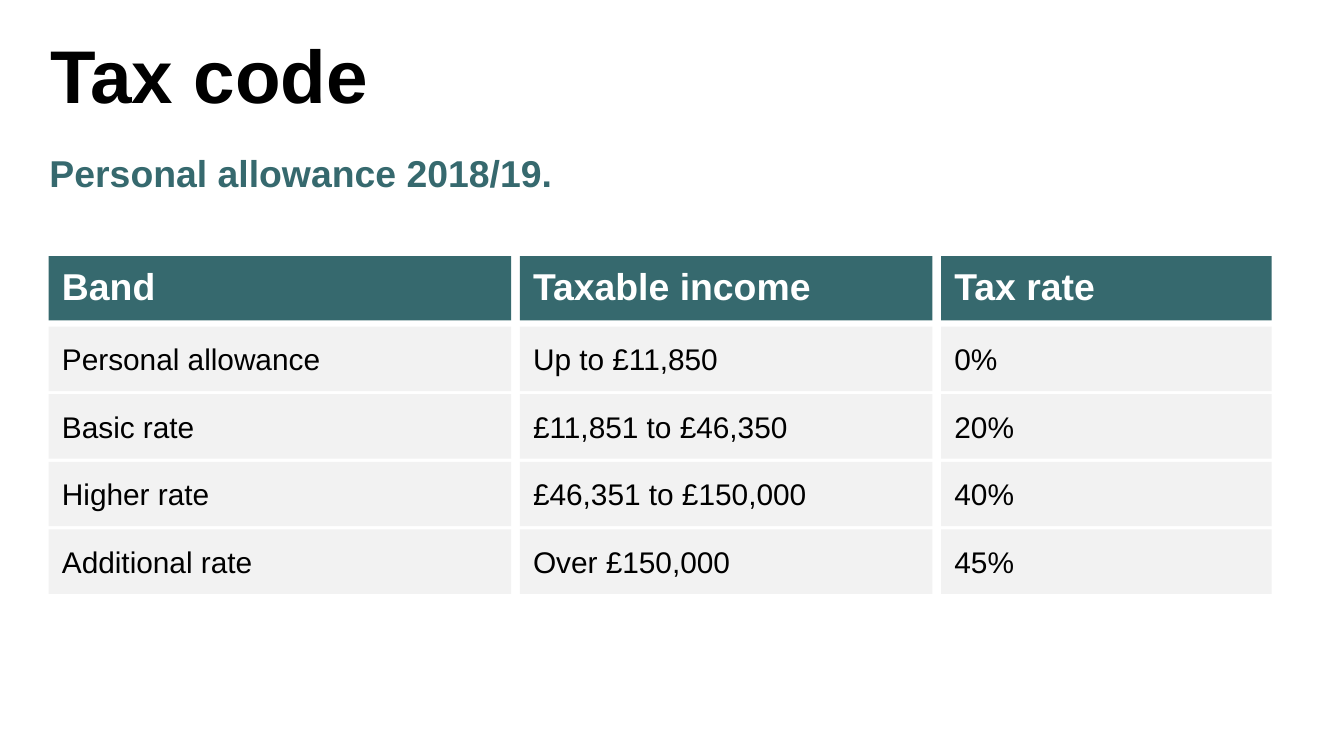
import itertools

import pptx
import pptx.dml.color
import pptx.enum.shapes
import pptx.enum.text
import pptx.util

ANCHOR = pptx.enum.text.MSO_ANCHOR
TEAL, GREY, WHITE, BLACK = "36696E", "F2F2F2", "FFFFFF", "000000"

COLUMN_WIDTHS = [34.4, 30.7, 24.6]
COLUMN_GAP = 0.65
TABLE_LEFT, HEADER_TOP, BODY_TOP = 3.63, 19.05, 24.3
ROW_HEIGHT, ROW_PITCH = 4.8, 5.03

HEADINGS = ["Band", "Taxable income", "Tax rate"]
BANDS = [
    ["Personal allowance", "Up to £11,850", "0%"],
    ["Basic rate", "£11,851 to £46,350", "20%"],
    ["Higher rate", "£46,351 to £150,000", "40%"],
    ["Additional rate", "Over £150,000", "45%"],
]


def color(value):
    """Turn a hex string into a colour."""
    return pptx.dml.color.RGBColor.from_string(value)


def write(shape, text, size=16, fill=BLACK, bold=False, before=0, spacing=None,
          anchor=ANCHOR.TOP):
    """Put one formatted paragraph into a shape."""
    frame = shape.text_frame
    frame.word_wrap = True
    frame.vertical_anchor = anchor
    paragraph = frame.paragraphs[0]
    paragraph.alignment = pptx.enum.text.PP_ALIGN.LEFT
    paragraph.space_before = pptx.util.Pt(before)
    paragraph.line_spacing = spacing
    run = paragraph.add_run()
    run.text = text
    run.font.name = "Arial"
    run.font.size = pptx.util.Pt(size)
    run.font.bold = bold
    run.font.color.rgb = color(fill)


class Deck:
    """Hold the slide and its square grid, 100 columns wide."""

    def __init__(self, width=10, ratio=16 / 9):
        """Start a presentation with one blank slide."""
        self.presentation = pptx.Presentation()
        self.presentation.slide_width = pptx.util.Inches(width)
        self.presentation.slide_height = pptx.util.Inches(width / ratio)
        self.unit = self.presentation.slide_width / 100
        self.slide = self.presentation.slides.add_slide(
            self.presentation.slide_layouts[6])

    def place(self, *cells):
        """Convert grid columns and rows to lengths."""
        return [round(cell * self.unit) for cell in cells]

    def text(self, box, text, **style):
        """Add a text box."""
        write(self.slide.shapes.add_textbox(*self.place(*box)), text, **style)

    def tile(self, box, text, background, **style):
        """Add a filled rectangle with text."""
        shape = self.slide.shapes.add_shape(
            pptx.enum.shapes.MSO_SHAPE.RECTANGLE, *self.place(*box))
        shape.shadow.inherit = False
        shape.fill.solid()
        shape.fill.fore_color.rgb = color(background)
        shape.line.fill.background()
        write(shape, text, before=6, **style)

    def row(self, top, texts, background, **style):
        """Add one row of tiles across the columns."""
        lefts = itertools.accumulate(
            (width + COLUMN_GAP for width in COLUMN_WIDTHS), initial=TABLE_LEFT)
        for left, width, text in zip(lefts, COLUMN_WIDTHS, texts):
            self.tile((left, top, width, ROW_HEIGHT), text, background, **style)


def main():
    """Build the tax code slide."""
    deck = Deck()
    deck.text((2.74, 2.4, 95.2, 8.1), "Tax code", size=40, bold=True,
              spacing=0.9)
    deck.text((2.7, 10.7, 68.4, 6.3), "Personal allowance 2018/19.", size=20,
              fill=TEAL, bold=True, before=18)
    deck.row(HEADER_TOP, HEADINGS, TEAL, size=20, fill=WHITE, bold=True)
    for index, band in enumerate(BANDS):
        deck.row(BODY_TOP + index * ROW_PITCH, band, GREY, anchor=ANCHOR.MIDDLE)
    deck.presentation.save("out.pptx")


if __name__ == "__main__":
    main()
